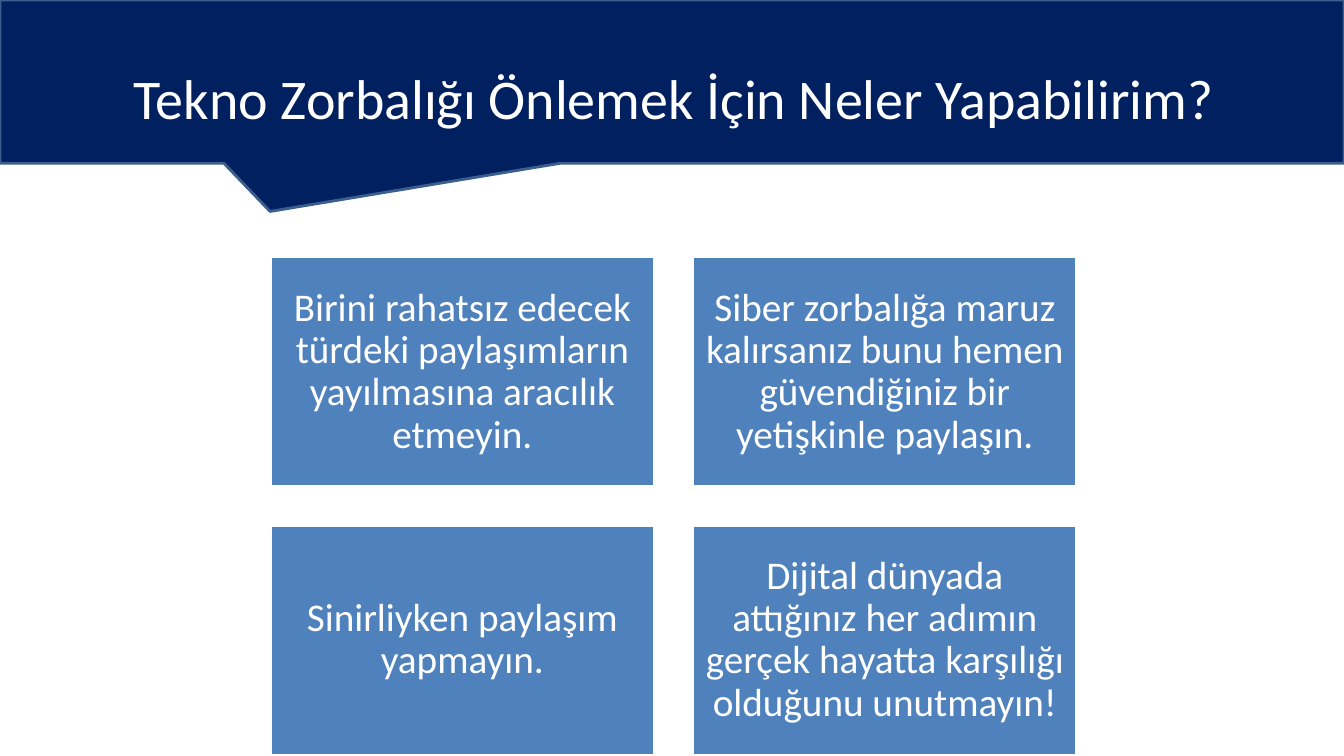
from dataclasses import dataclass

from pptx import Presentation
from pptx.dml.color import RGBColor
from pptx.enum.shapes import MSO_SHAPE
from pptx.enum.text import MSO_ANCHOR, MSO_AUTO_SIZE, PP_ALIGN
from pptx.util import Inches, Pt


@dataclass(frozen=True)
class Theme:
    font: str = "Calibri"
    banner: RGBColor = RGBColor(0x00, 0x20, 0x60)
    banner_line: RGBColor = RGBColor(0x3A, 0x5F, 0x8C)
    card: RGBColor = RGBColor(0x4F, 0x81, 0xBD)
    white: RGBColor = RGBColor(0xFF, 0xFF, 0xFF)
    title_size: int = 40
    card_size: int = 28
    line_width: int = 2


class SlideBuilder:
    def __init__(self, slide, theme):
        self.slide = slide
        self.theme = theme

    def add_shape(self, kind, left, top, width, height, fill, line):
        shape = self.slide.shapes.add_shape(
            kind, Inches(left), Inches(top), Inches(width), Inches(height))
        shape.shadow.inherit = False
        shape.fill.solid()
        shape.fill.fore_color.rgb = fill
        shape.line.color.rgb = line
        shape.line.width = Pt(self.theme.line_width)
        return shape

    def set_text(self, shape, text, size, vertical_margin):
        frame = shape.text_frame
        frame.text = text
        frame.word_wrap = True
        frame.auto_size = MSO_AUTO_SIZE.NONE
        frame.vertical_anchor = MSO_ANCHOR.MIDDLE
        frame.margin_left = frame.margin_right = Inches(0.12)
        frame.margin_top = frame.margin_bottom = Inches(vertical_margin)
        paragraph = frame.paragraphs[0]
        paragraph.alignment = PP_ALIGN.CENTER
        paragraph.font.name = self.theme.font
        paragraph.font.size = Pt(size)
        paragraph.font.color.rgb = self.theme.white
        return paragraph

    def title(self, text, left, top, width, height):
        title = self.slide.shapes.title
        title.left, title.top = Inches(left), Inches(top)
        title.width, title.height = Inches(width), Inches(height)
        self.set_text(title, text, self.theme.title_size, 0.06)

    def banner(self, width, height):
        banner = self.add_shape(
            MSO_SHAPE.RECTANGULAR_CALLOUT, 0, 0, width, height,
            self.theme.banner, self.theme.banner_line)
        banner.adjustments[0] = -0.299
        banner.adjustments[1] = 0.795
        # Keep the banner behind the title
        self.slide.shapes.title.element.addprevious(banner.element)

    def card(self, text, left, top, width, height):
        card = self.add_shape(
            MSO_SHAPE.RECTANGLE, left, top, width, height,
            self.theme.card, self.theme.white)
        paragraph = self.set_text(card, text, self.theme.card_size, 0.12)
        paragraph.line_spacing = 0.9


def main():
    presentation = Presentation()
    presentation.slide_width = Inches(13.33)
    presentation.slide_height = Inches(7.5)
    slide = presentation.slides.add_slide(presentation.slide_layouts[5])
    builder = SlideBuilder(slide, Theme())

    # Heading
    builder.banner(13.33, 1.62)
    builder.title("Tekno Zorbalığı Önlemek İçin Neler Yapabilirim?",
                  0.68, 0.52, 12, 0.88)

    # Two-by-two grid of advice
    advice = [
        "Birini rahatsız edecek türdeki paylaşımların yayılmasına aracılık etmeyin.",
        "Siber zorbalığa maruz kalırsanız bunu hemen güvendiğiniz bir yetişkinle paylaşın.",
        "Sinirliyken paylaşım yapmayın.",
        "Dijital dünyada attığınız her adımın gerçek hayatta karşılığı olduğunu unutmayın!",
    ]
    left, top, width, height, gap = 2.68, 2.55, 3.81, 2.28, 0.38
    for index, text in enumerate(advice):
        row, column = divmod(index, 2)
        builder.card(text, left + column * (width + gap),
                     top + row * (height + gap), width, height)

    presentation.save("out.pptx")


if __name__ == "__main__":
    main()
